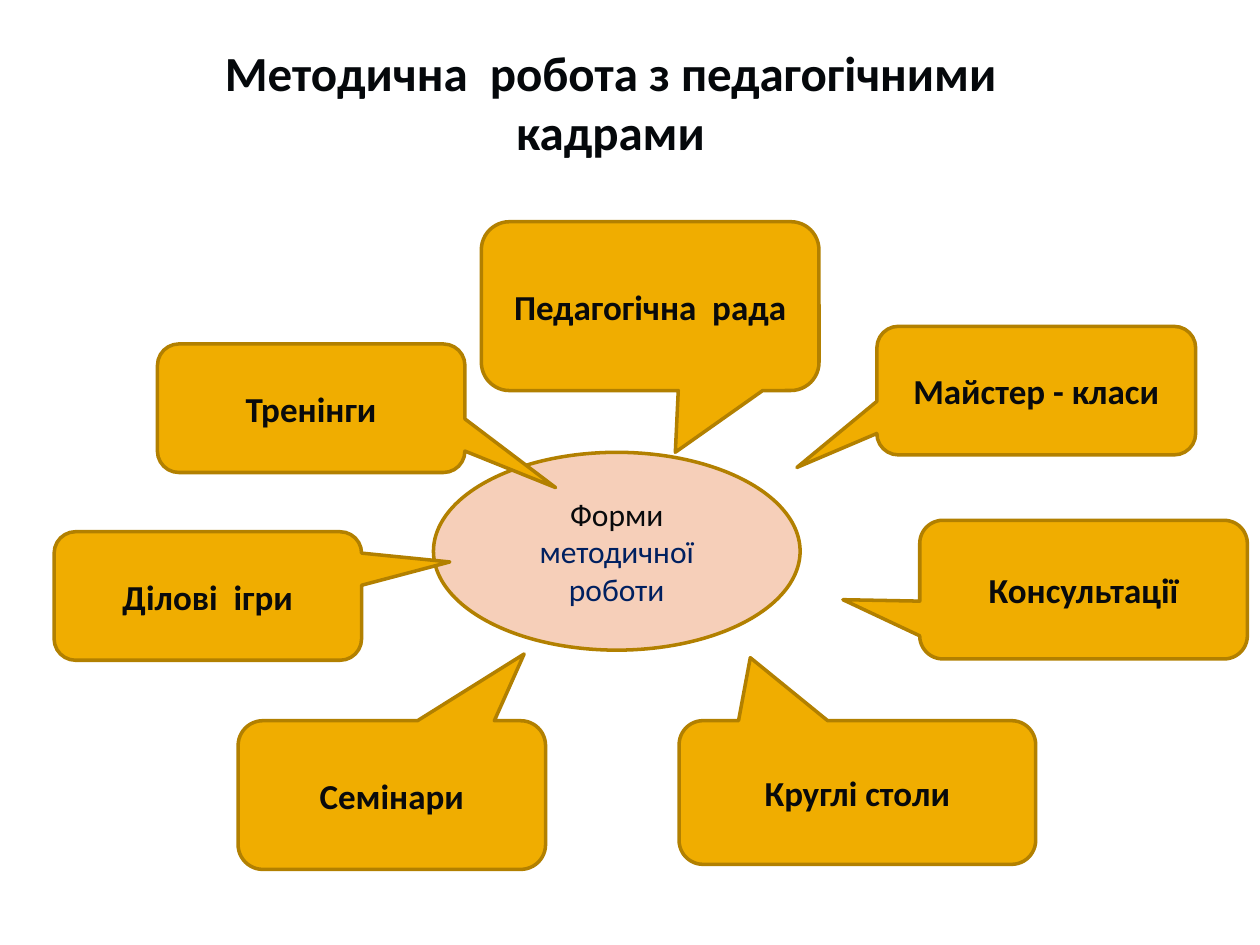
from pptx import Presentation
from pptx.dml.color import RGBColor
from pptx.enum.shapes import MSO_SHAPE
from pptx.enum.text import MSO_ANCHOR, MSO_AUTO_SIZE, PP_ALIGN
from pptx.util import Pt

PX = 9144
DARK = "090A0C"
NAVY = "002060"
GOLD = "F0AD00"
BRONZE = "B28000"
PEACH = "F6CFB9"

CALLOUTS = [
    ("Педагогічна  рада", (382, 176, 268, 134), (20, 116)),
    ("Тренінги", (125, 273, 244, 102), (194, 63)),
    ("Ділові  ігри", (43, 422, 244, 102), (192, -27)),
    ("Семінари", (189, 572, 244, 118), (105, -112)),
    ("Майстер - класи", (696, 259, 253, 102), (-190, 61)),
    ("Консультації", (730, 413, 260, 110), (-191, 8)),
    ("Круглі столи", (539, 572, 283, 114), (-85, -107)),
]


def px(n):
    return n * PX


def rgb(value):
    return RGBColor.from_string(value)


def add_text(p, text, size=20, color=DARK, bold=False):
    p.alignment = PP_ALIGN.CENTER
    r = p.add_run()
    r.text = text
    r.font.name = "Calibri"
    r.font.size = Pt(size)
    r.font.bold = bold
    r.font.color.rgb = rgb(color)


def add_figure(s, kind, box, fill):
    sp = s.shapes.add_shape(kind, *map(px, box))
    sp.shadow.inherit = False
    sp.fill.solid()
    sp.fill.fore_color.rgb = rgb(fill)
    sp.line.color.rgb = rgb(BRONZE)
    sp.line.width = Pt(2)
    sp.text_frame.word_wrap = True
    sp.text_frame.vertical_anchor = MSO_ANCHOR.MIDDLE
    return sp


def add_title(s, box):
    sp = s.shapes.title
    sp.left, sp.top, sp.width, sp.height = map(px, box)
    tf = sp.text_frame
    tf.word_wrap = True
    tf.auto_size = MSO_AUTO_SIZE.SHAPE_TO_FIT_TEXT
    tf.vertical_anchor = MSO_ANCHOR.TOP
    add_text(tf.paragraphs[0], "Методична  робота з педагогічними кадрами",
             size=28, color="05080B", bold=True)


def add_centre(s, box):
    sp = add_figure(s, MSO_SHAPE.OVAL, box, PEACH)
    p = sp.text_frame.paragraphs[0]
    add_text(p, "Форми ", size=18)
    add_text(p, "методичної роботи", size=18, color=NAVY)


def add_callout(s, text, box, tip):
    sp = add_figure(s, MSO_SHAPE.ROUNDED_RECTANGULAR_CALLOUT, box, GOLD)
    sp.adjustments[0] = tip[0] / box[2]
    sp.adjustments[1] = tip[1] / box[3]
    add_text(sp.text_frame.paragraphs[0], text, bold=True)


def main():
    prs = Presentation()
    prs.slide_width, prs.slide_height = px(1000), px(750)
    s = prs.slides.add_slide(prs.slide_layouts[5])
    add_title(s, (130, 29, 709, 104))
    add_centre(s, (344, 359, 291, 157))
    for text, box, tip in CALLOUTS:
        add_callout(s, text, box, tip)
    prs.save("out.pptx")


if __name__ == "__main__":
    main()
